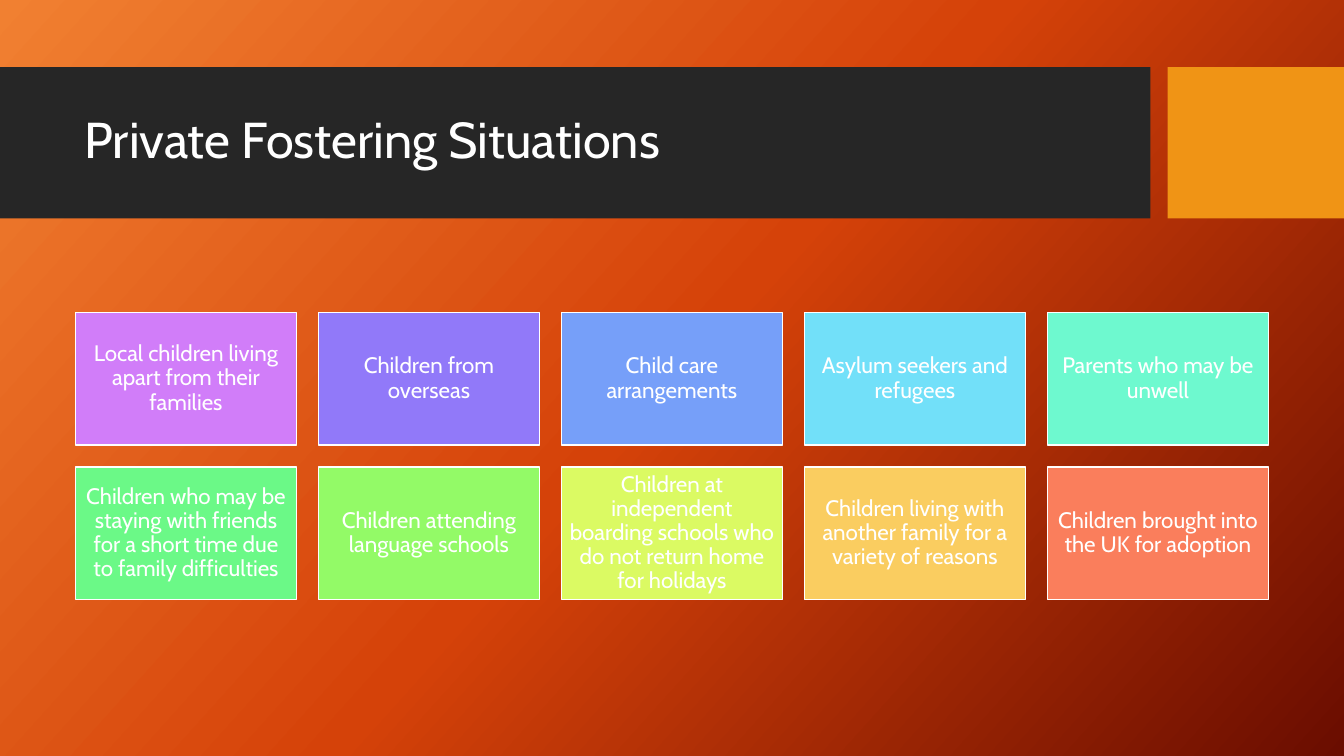
from copy import deepcopy
from dataclasses import dataclass

from pptx import Presentation
from pptx import util as u
from pptx.dml import color
from pptx.enum import shapes, text
from pptx.oxml import ns


@dataclass(frozen=True)
class Theme:
    font: str = "Cabin"
    title_size: int = 36
    card_size: int = 16
    white: str = "FFFFFF"
    band: str = "262626"
    accent: str = "F09415"
    background: tuple = ((0, "F18031"), (0.5, "D54209"), (1, "6A0D00"))
    background_angle: int = 42


THEME = Theme()

SITUATIONS = [
    ("Local children living apart from their families", "D17DF9"),
    ("Children from overseas", "9179F9"),
    ("Child care arrangements", "769FF9"),
    ("Asylum seekers and refugees", "72E0F9"),
    ("Parents who may be unwell", "6EF9CF"),
    ("Children who may be staying with friends for a short time "
     "due to family difficulties", "6BF987"),
    ("Children attending language schools", "93FA67"),
    ("Children at independent boarding schools who do not return "
     "home for holidays", "DBFA63"),
    ("Children living with another family for a variety of reasons", "FACD60"),
    ("Children brought into the UK for adoption", "FA7E5C"),
]


def rgb(value):
    return color.RGBColor.from_string(value)


def add_rectangle(slide, box, fill, line=None):
    shape = slide.shapes.add_shape(
        shapes.MSO_SHAPE.RECTANGLE, *[u.Pt(length) for length in box])
    shape.shadow.inherit = False
    shape.fill.solid()
    shape.fill.fore_color.rgb = rgb(fill)
    if line:
        shape.line.color.rgb = rgb(line)
        shape.line.width = u.Pt(1)
    else:
        shape.line.fill.background()
    return shape


def write_text(shape, words, size, alignment, insets):
    frame = shape.text_frame
    frame.word_wrap = True
    frame.vertical_anchor = text.MSO_ANCHOR.MIDDLE
    frame.margin_left = frame.margin_right = u.Pt(insets[0])
    frame.margin_top = frame.margin_bottom = u.Pt(insets[1])
    paragraph = frame.paragraphs[0]
    paragraph.alignment = alignment
    paragraph.line_spacing = 0.9
    run = paragraph.add_run()
    run.text = words
    run.font.name = THEME.font
    run.font.size = u.Pt(size)
    run.font.color.rgb = rgb(THEME.white)


def paint_background(slide):
    fill = slide.background.fill
    fill.gradient()
    # A new gradient has two stops; add the third
    stop_list = slide.element.find(".//" + ns.qn("a:gsLst"))
    stop_list.append(deepcopy(stop_list[-1]))
    for stop, (position, value) in zip(fill.gradient_stops, THEME.background):
        stop.position = position
        stop.color.rgb = rgb(value)
    # The library measures angles counterclockwise
    fill.gradient_angle = 360 - THEME.background_angle


def add_header(slide, box, title):
    left, top, width, height = box
    accent_width, gap = 126, 12.2
    band_width = width - accent_width - gap
    add_rectangle(slide, (left, top, band_width, height), THEME.band)
    add_rectangle(slide, (left + width - accent_width, top, accent_width, height),
                  THEME.accent)
    title_box = (left + 53.3, top + 10.8, band_width - 64.8, 85)
    shape = slide.shapes.add_textbox(*[u.Pt(length) for length in title_box])
    write_text(shape, title, THEME.title_size, text.PP_ALIGN.LEFT, (7.2, 3.6))


def add_card_grid(slide, box, cards, columns=5):
    left, top, width = box
    # Gaps are a tenth of a card's width; cards are 0.6 as high as wide
    card_width = width / (columns + 0.1 * (columns - 1))
    card_height = 0.6 * card_width
    gap = 0.1 * card_width
    for index, (words, fill) in enumerate(cards):
        row, column = divmod(index, columns)
        card_box = (left + column * (card_width + gap),
                    top + row * (card_height + gap), card_width, card_height)
        card = add_rectangle(slide, card_box, fill, THEME.white)
        write_text(card, words, THEME.card_size, text.PP_ALIGN.CENTER, (4.8, 4.8))


def main():
    presentation = Presentation()
    presentation.slide_width = u.Pt(960)
    presentation.slide_height = u.Pt(540)
    slide = presentation.slides.add_slide(presentation.slide_layouts[6])
    paint_background(slide)
    add_header(slide, (0, 48, 960, 108), "Private Fostering Situations")
    add_card_grid(slide, (54, 223.2, 852), SITUATIONS)
    presentation.save("out.pptx")


if __name__ == "__main__":
    main()
